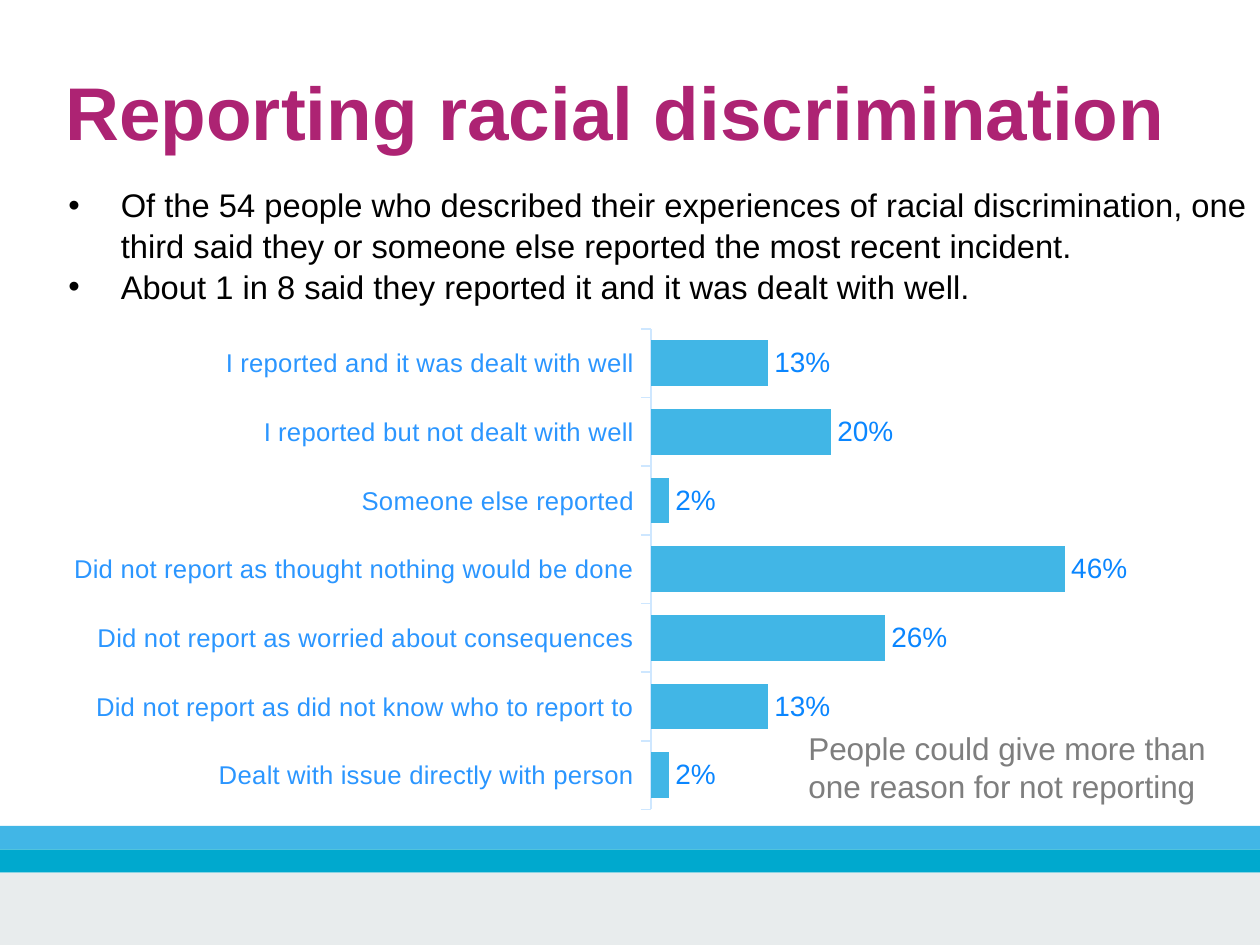
from lxml import etree
from pptx import Presentation
from pptx.chart.data import CategoryChartData
from pptx.dml.color import RGBColor
from pptx.enum.chart import XL_CHART_TYPE, XL_LABEL_POSITION, XL_TICK_MARK
from pptx.enum.shapes import MSO_SHAPE
from pptx.enum.text import MSO_ANCHOR, MSO_AUTO_SIZE, PP_ALIGN
from pptx.oxml import parse_xml
from pptx.oxml.ns import nsdecls, qn
from pptx.util import Pt

BAR = XL_CHART_TYPE.BAR_CLUSTERED
OUTSIDE_END = XL_LABEL_POSITION.OUTSIDE_END
TICK_OUT, TICK_NONE = XL_TICK_MARK.OUTSIDE, XL_TICK_MARK.NONE
RECT = MSO_SHAPE.RECTANGLE
TOP = MSO_ANCHOR.TOP
NO_FIT = MSO_AUTO_SIZE.NONE
LEFT = PP_ALIGN.LEFT

FONT = "Arial"
COLORS = {
    "title": "AD2373", "body": "000000", "note": "7E7E7E",
    "bar": "41B6E6", "teal": "00A9CE", "footer": "E8ECED",
    "axis": "CEE7FF", "category": "2B96FF", "value": "0A86FF",
}
BULLETS = [
    "Of the 54 people who described their experiences of racial discrimination, "
    "one third said they or someone else reported the most recent incident.",
    "About 1 in 8 said they reported it and it was dealt with well.",
]
RESPONSES = [
    ("I reported and it was dealt with well", 0.13),
    ("I reported but not dealt with well", 0.20),
    ("Someone else reported", 0.02),
    ("Did not report as thought nothing would be done", 0.46),
    ("Did not report as worried about consequences", 0.26),
    ("Did not report as did not know who to report to", 0.13),
    ("Dealt with issue directly with person", 0.02),
]


def rgb(name):
    """Return the named colour."""
    return RGBColor.from_string(COLORS[name])


def style_font(font, size, color, bold=False):
    """Set the face, size and colour of a font."""
    font.name, font.size, font.bold = FONT, Pt(size), bold
    font.color.rgb = rgb(color)


def write_text(sp, box, lines, size, color, bold=False, spacing=1.0, bullet=False):
    """Place a text shape in its box and write one paragraph per line."""
    sp.left, sp.top, sp.width, sp.height = (Pt(v) for v in box)
    tf = sp.text_frame
    tf.word_wrap, tf.auto_size, tf.vertical_anchor = True, NO_FIT, TOP
    tf.margin_left = tf.margin_top = tf.margin_right = tf.margin_bottom = 0
    for i, line in enumerate(lines):
        p = tf.paragraphs[0] if i == 0 else tf.add_paragraph()
        p.alignment, p.line_spacing = LEFT, spacing
        p.space_before = p.space_after = Pt(0)
        r = p.add_run()
        r.text = line
        style_font(r.font, size, color, bold)
        if bullet:
            pPr = p._p.get_or_add_pPr()
            pPr.set("marL", str(Pt(23.75)))
            pPr.set("indent", str(Pt(-22.5)))
            etree.SubElement(pPr, qn("a:buFont")).set("typeface", FONT)
            etree.SubElement(pPr, qn("a:buChar")).set("char", "•")


def add_text(slide, box, lines, **fmt):
    """Add a text box with formatted lines."""
    write_text(slide.shapes.add_textbox(0, 0, 0, 0), box, lines, **fmt)


def add_bands(slide, box):
    """Draw two thin stripes above the pale footer band."""
    x, y, w, h = box
    stripe = 10
    bands = [("bar", stripe), ("teal", stripe), ("footer", h - 2 * stripe)]
    for color, height in bands:
        sp = slide.shapes.add_shape(RECT, Pt(x), Pt(y), Pt(w), Pt(height))
        sp.shadow.inherit = False
        sp.fill.solid()
        sp.fill.fore_color.rgb = rgb(color)
        sp.line.fill.background()
        y += height


def set_plot_area(chart, x, y, w, h):
    """Fix the inner plot area as fractions of the chart."""
    plot_area = chart._chartSpace.chart.plotArea
    for layout in plot_area.findall(qn("c:layout")):
        plot_area.remove(layout)
    values = {"x": x, "y": y, "w": w, "h": h}
    parts = "".join(f'<c:{k} val="{v:.4f}"/>' for k, v in values.items())
    plot_area.insert(0, parse_xml(
        f'<c:layout {nsdecls("c")}><c:manualLayout><c:layoutTarget val="inner"/>'
        f'<c:xMode val="edge"/><c:yMode val="edge"/>{parts}'
        "</c:manualLayout></c:layout>"))


def add_response_chart(slide, box):
    """Add the bar chart of responses."""
    x, y, w, h = box
    data = CategoryChartData(number_format="0%")
    data.categories = [label for label, _ in RESPONSES]
    data.add_series("Responses", [value for _, value in RESPONSES])
    chart = slide.shapes.add_chart(BAR, Pt(x), Pt(y), Pt(w), Pt(h), data).chart
    chart.has_legend = chart.has_title = False
    style_font(chart.font, 11, "category")
    set_plot_area(chart, 251 / w, 6 / h, 212 / w, 206 / h)

    axis = chart.category_axis
    axis.reverse_order = True
    axis.major_tick_mark, axis.minor_tick_mark = TICK_OUT, TICK_NONE
    axis.format.line.color.rgb = rgb("axis")
    axis.format.line.width = Pt(0.75)
    style_font(axis.tick_labels.font, 11, "category")

    scale = chart.value_axis
    scale.minimum_scale, scale.maximum_scale = 0, 0.55
    scale.has_major_gridlines = False
    scale.visible = False

    plot = chart.plots[0]
    plot.gap_width, plot.vary_by_categories = 50, False
    fill = plot.series[0].format.fill
    fill.solid()
    fill.fore_color.rgb = rgb("bar")
    plot.has_data_labels = True
    labels = plot.data_labels
    labels.show_value, labels.position = True, OUTSIDE_END
    labels.number_format, labels.number_format_is_linked = "0%", False
    style_font(labels.font, 12, "value")


def main():
    """Build and save the slide."""
    prs = Presentation()
    prs.slide_width, prs.slide_height = Pt(540), Pt(405)
    slide = prs.slides.add_slide(prs.slide_layouts[5])
    add_bands(slide, (0, 354, 540, 51))
    write_text(slide.shapes.title, (28, 28.4, 484, 40),
               ["Reporting racial discrimination"], size=32, color="title", bold=True)
    add_text(slide, (28, 78.8, 508, 52), BULLETS,
             size=14, color="body", spacing=1.04, bullet=True)
    add_response_chart(slide, (28, 135, 472, 218))
    add_text(slide, (346.5, 312, 175, 34),
             ["People could give more than one reason for not reporting"],
             size=13.5, color="note", spacing=1.02)
    prs.save("out.pptx")


if __name__ == "__main__":
    main()
